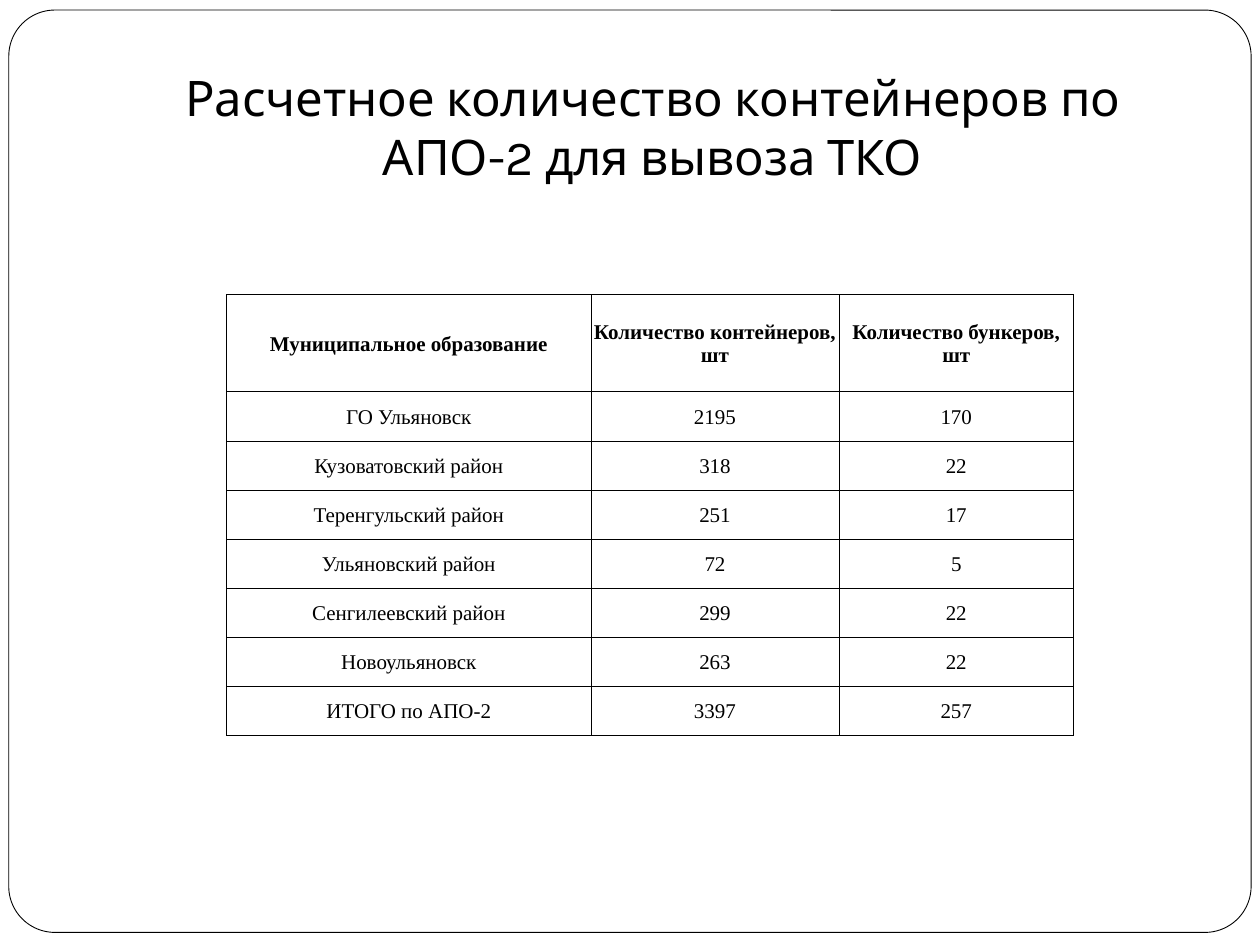
from dataclasses import dataclass

from lxml import etree
from pptx import Presentation
from pptx.dml.color import RGBColor
from pptx.enum.shapes import MSO_SHAPE as Shape
from pptx.enum.text import MSO_ANCHOR as Anchor, PP_ALIGN as Align
from pptx.oxml.ns import qn
from pptx.util import Inches, Pt

BLACK = RGBColor(0x00, 0x00, 0x00)
WHITE = RGBColor(0xFF, 0xFF, 0xFF)
LINE = Pt(0.5)


@dataclass
class Row:
    area: str
    bins: str
    tanks: str
    high: float = 0.39
    bold: bool = False

    def texts(self) -> tuple[str, str, str]:
        return self.area, self.bins, self.tanks


TITLE = "Расчетное количество контейнеров по АПО-2 для вывоза ТКО"
WIDTHS = (2.89, 1.97, 1.86)
ROWS = [
    Row("Муниципальное образование", "Количество контейнеров, шт",
        "Количество бункеров, шт", 0.77, True),
    Row("ГО Ульяновск", "2195", "170"),
    Row("Кузоватовский район", "318", "22"),
    Row("Теренгульский район", "251", "17"),
    Row("Ульяновский район", "72", "5"),
    Row("Сенгилеевский район", "299", "22"),
    Row("Новоульяновск", "263", "22"),
    Row("ИТОГО по АПО-2", "3397", "257"),
]
CELL = {
    "vertical_anchor": Anchor.MIDDLE,
    "margin_left": Inches(0.01),
    "margin_right": Inches(0.01),
    "margin_top": Inches(0.01),
    "margin_bottom": Inches(0),
}
HEAD = {
    "word_wrap": True,
    "vertical_anchor": Anchor.BOTTOM,
    "margin_left": Inches(0.1),
    "margin_right": Inches(0.1),
    "margin_top": Inches(0.05),
    "margin_bottom": Inches(0.1),
}


def apply(item, values: dict) -> None:
    for name, value in values.items():
        setattr(item, name, value)


def write(frame, text: str, face: str, size: float, bold: bool = False) -> None:
    para = frame.paragraphs[0]
    para.alignment = Align.CENTER
    run = para.add_run()
    run.text = text
    apply(run.font, {"name": face, "size": Pt(size), "bold": bold})
    run.font.color.rgb = BLACK


def border(cell) -> None:
    props = cell._tc.get_or_add_tcPr()
    # Borders must stand before the fill
    for spot, side in enumerate(("lnL", "lnR", "lnT", "lnB")):
        line = etree.Element(qn(f"a:{side}"), w=str(LINE))
        fill = etree.SubElement(line, qn("a:solidFill"))
        etree.SubElement(fill, qn("a:srgbClr"), val=str(BLACK))
        props.insert(spot, line)


def add_frame(slide) -> None:
    card = slide.shapes.add_shape(
        Shape.ROUNDED_RECTANGLE,
        Inches(0.07), Inches(0.08), Inches(9.86), Inches(7.32))
    card.adjustments[0] = 0.05
    card.shadow.inherit = False
    card.fill.solid()
    card.fill.fore_color.rgb = WHITE
    card.line.color.rgb = BLACK
    card.line.width = LINE


def add_title(slide) -> None:
    box = slide.shapes.add_textbox(
        Inches(1.33), Inches(0.39), Inches(7.7), Inches(1.18))
    apply(box.text_frame, HEAD)
    write(box.text_frame, TITLE, "Karla", 28)


def add_grid(slide) -> None:
    high = sum(row.high for row in ROWS)
    grid = slide.shapes.add_table(
        len(ROWS), len(WIDTHS), Inches(1.8), Inches(2.34),
        Inches(sum(WIDTHS)), Inches(high)).table
    apply(grid, {"first_row": False, "horz_banding": False})
    for col, wide in zip(grid.columns, WIDTHS):
        col.width = Inches(wide)
    for line, row in zip(grid.rows, ROWS):
        line.height = Inches(row.high)
        for cell, text in zip(line.cells, row.texts()):
            apply(cell, CELL)
            cell.fill.background()
            border(cell)
            write(cell.text_frame, text, "Times New Roman", 12, row.bold)


def main() -> None:
    deck = Presentation()
    apply(deck, {"slide_width": Inches(10), "slide_height": Inches(7.5)})
    slide = deck.slides.add_slide(deck.slide_layouts[6])
    add_frame(slide)
    add_title(slide)
    add_grid(slide)
    deck.save("out.pptx")


if __name__ == "__main__":
    main()
